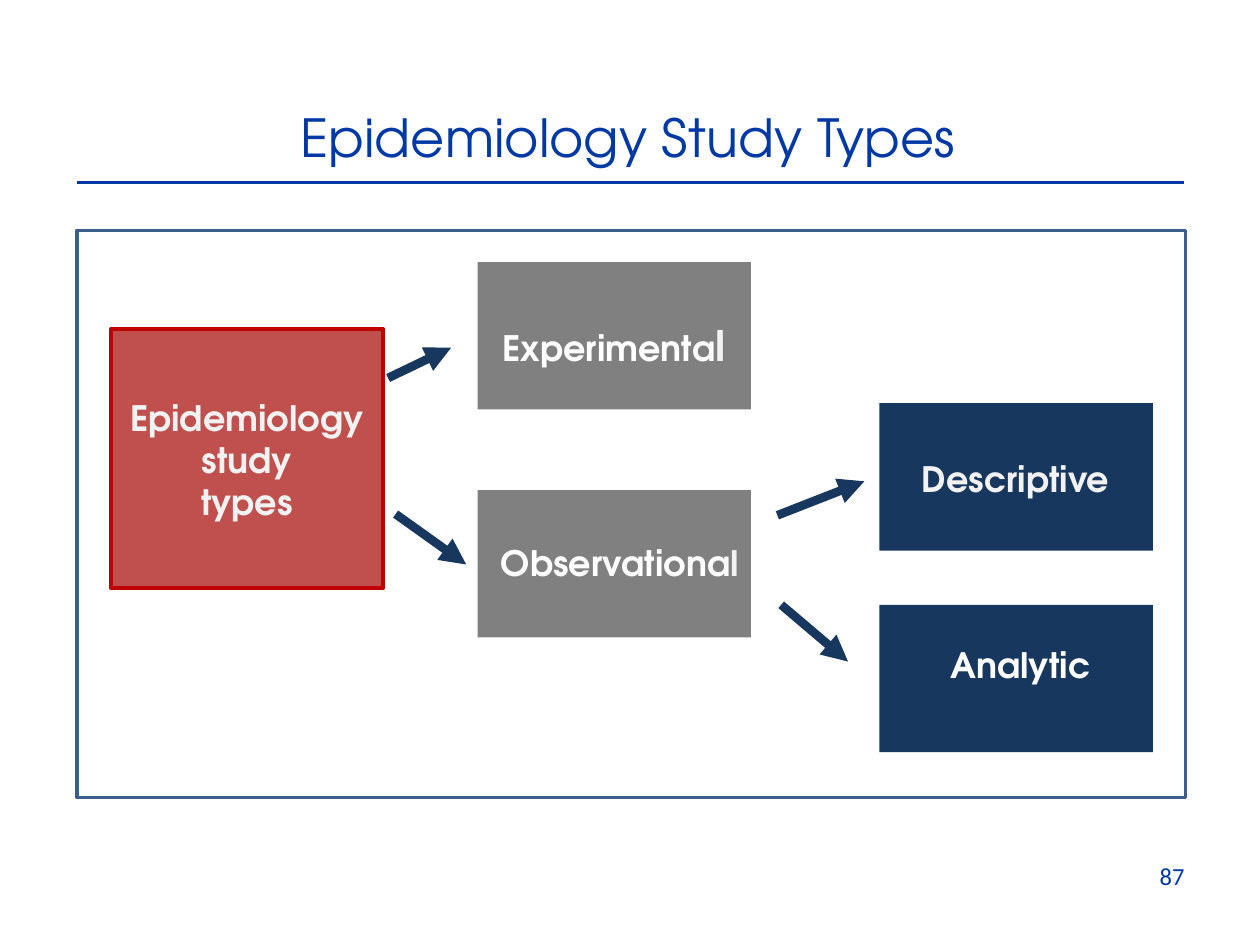
from lxml import etree
from pptx import Presentation
from pptx.dml.color import RGBColor
from pptx.enum.shapes import MSO_CONNECTOR, MSO_SHAPE
from pptx.enum.text import MSO_ANCHOR, PP_ALIGN
from pptx.oxml.ns import qn
from pptx.util import Inches, Pt

RECT, STRAIGHT = MSO_SHAPE.RECTANGLE, MSO_CONNECTOR.STRAIGHT
TOP, MIDDLE = MSO_ANCHOR.TOP, MSO_ANCHOR.MIDDLE
CENTER, RIGHT = PP_ALIGN.CENTER, PP_ALIGN.RIGHT

WHITE = RGBColor(0xFF, 0xFF, 0xFF)
PALE = RGBColor(0xF2, 0xF2, 0xF2)
BLUE = RGBColor(0x00, 0x39, 0xA6)
STEEL = RGBColor(0x3A, 0x5F, 0x8C)
NAVY = RGBColor(0x17, 0x37, 0x5E)
GRAY = RGBColor(0x80, 0x80, 0x80)
RED = RGBColor(0xC0, 0x50, 0x4D)
DARK_RED = RGBColor(0xC0, 0x00, 0x00)

HEAD_FONT, NUMBER_FONT = "TeX Gyre Adventor", "Calibri"
SLIDE_W, SLIDE_H = Inches(10), Inches(7.5)
COLS, ROWS = 1000, 750
NODE_W, NODE_H = 217, 117
LABEL_W, LABEL_H = 224, 44

NODES = [
    (27, 78, 216, 206, RED, DARK_RED),
    (318, 25, NODE_W, NODE_H, GRAY, None),
    (318, 206, NODE_W, NODE_H, GRAY, None),
    (637, 137, NODE_W, NODE_H, NAVY, None),
    (637, 297, NODE_W, NODE_H, NAVY, None),
]
LABELS = [
    (28, 127, 214, 111, [[("Epidemiology study", 20, PALE)], [("types", 20, PALE)]]),
    (319, 66, LABEL_W, 51, [[("Experimenta", 20, WHITE), ("l ", 24, PALE)]]),
    (319, 242, LABEL_W, LABEL_H, [[("Observationa", 20, WHITE), ("l", 20, PALE)]]),
    (633, 175, LABEL_W, LABEL_H, [[("Descriptive", 20, PALE)]]),
    (637, 323, LABEL_W, LABEL_H, [[("Analytic", 20, WHITE)]]),
]
ARROWS = [
    (247, 117, 297, 93),
    (253, 225, 309, 265),
    (556, 226, 625, 199),
    (559, 297, 612, 342),
]


def grid(x, y):
    """Turn a column and a row into slide lengths."""
    return int(SLIDE_W * x / COLS), int(SLIDE_H * y / ROWS)


def add_rect(s, x, y, w, h, fill, line=None, width=2):
    """Add a flat rectangle, outlined if a line colour is given."""
    sp = s.shapes.add_shape(RECT, *grid(x, y), *grid(w, h))
    sp.shadow.inherit = False
    sp.fill.solid()
    sp.fill.fore_color.rgb = fill
    if line is None:
        sp.line.fill.background()
    else:
        sp.line.color.rgb = line
        sp.line.width = Pt(width)


def add_line(s, x1, y1, x2, y2, color, width, arrow=False):
    """Add a straight line, with an arrowhead at its end if asked."""
    c = s.shapes.add_connector(STRAIGHT, *grid(x1, y1), *grid(x2, y2))
    c.line.color.rgb = color
    c.line.width = Pt(width)
    if arrow:
        etree.SubElement(c.line._get_or_add_ln(), qn("a:tailEnd"), type="triangle")
    etree.SubElement(c._element.spPr, qn("a:effectLst"))


def write(sp, paragraphs, font=HEAD_FONT, bold=False, align=CENTER, anchor=TOP):
    """Fill a shape with paragraphs of (text, size, colour) runs."""
    tf = sp.text_frame
    tf.word_wrap = True
    tf.vertical_anchor = anchor
    for i, runs in enumerate(paragraphs):
        p = tf.paragraphs[0] if i == 0 else tf.add_paragraph()
        p.alignment = align
        for text, size, color in runs:
            r = p.add_run()
            r.text = text
            r.font.name = font
            r.font.size = Pt(size)
            r.font.bold = bold
            r.font.color.rgb = color


def add_text(s, x, y, w, h, paragraphs, **style):
    """Add a wrapped text box."""
    write(s.shapes.add_textbox(*grid(x, y), *grid(w, h)), paragraphs, **style)


def add_heading(s, x, y, w, h):
    """Place the title and the rule under it."""
    title = s.shapes.title
    title.left, title.top = grid(x, y)
    title.width, title.height = grid(w, h)
    write(title, [[("Epidemiology Study Types", 30, BLUE)]], anchor=MIDDLE)
    rule_y = y + h + 6
    add_line(s, x + 10, rule_y, x + w - 6, rule_y, BLUE, 2)


def add_tree(s, x, y, w, h):
    """Draw the framed tree of study types."""
    add_rect(s, x, y, w, h, WHITE, STEEL)
    for dx, dy, nw, nh, fill, line in NODES:
        add_rect(s, x + dx, y + dy, nw, nh, fill, line, 2.25)
    for dx, dy, lw, lh, paragraphs in LABELS:
        add_text(s, x + dx, y + dy, lw, lh, paragraphs, bold=True)
    for x1, y1, x2, y2 in ARROWS:
        add_line(s, x + x1, y + y1, x + x2, y + y2, NAVY, 5, arrow=True)


def main():
    """Build and save the slide."""
    prs = Presentation()
    prs.slide_width, prs.slide_height = SLIDE_W, SLIDE_H
    s = prs.slides.add_slide(prs.slide_layouts[5])
    add_heading(s, 51, 78, 895, 61)
    add_tree(s, 61, 183, 880, 450)
    add_text(s, 717, 675, 233, 40, [[("87", 14, BLUE)]],
             font=NUMBER_FONT, align=RIGHT, anchor=MIDDLE)
    prs.save("out.pptx")


if __name__ == "__main__":
    main()
